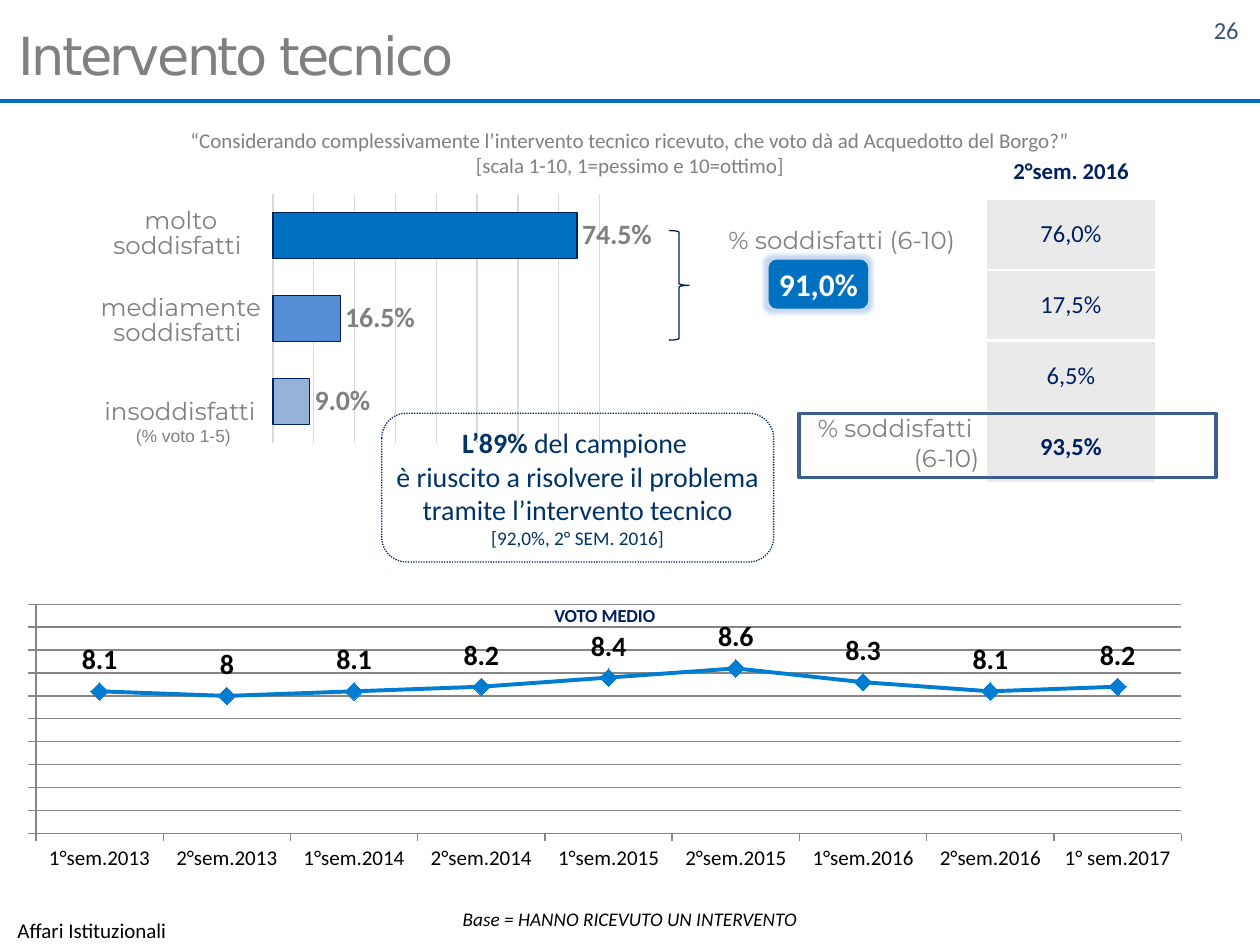
from dataclasses import dataclass

from pptx import Presentation
from pptx.chart.data import CategoryChartData
from pptx.dml.color import RGBColor
from pptx.enum.chart import XL_CHART_TYPE, XL_LABEL_POSITION, XL_MARKER_STYLE, XL_TICK_LABEL_POSITION, XL_TICK_MARK
from pptx.enum.dml import MSO_LINE
from pptx.enum.shapes import MSO_CONNECTOR, MSO_SHAPE
from pptx.enum.text import MSO_ANCHOR, MSO_AUTO_SIZE, PP_ALIGN
from pptx.oxml import parse_xml
from pptx.oxml.ns import nsdecls
from pptx.util import Inches, Pt

LEFT, CENTER, RIGHT = PP_ALIGN.LEFT, PP_ALIGN.CENTER, PP_ALIGN.RIGHT
TOP, MIDDLE = MSO_ANCHOR.TOP, MSO_ANCHOR.MIDDLE
BAR, LINE = XL_CHART_TYPE.BAR_CLUSTERED, XL_CHART_TYPE.LINE_MARKERS
OUTSIDE_END, ABOVE = XL_LABEL_POSITION.OUTSIDE_END, XL_LABEL_POSITION.ABOVE
NO_TICK_LABELS, TICK_OUTSIDE = XL_TICK_LABEL_POSITION.NONE, XL_TICK_MARK.OUTSIDE
DIAMOND, DOTTED, STRAIGHT = XL_MARKER_STYLE.DIAMOND, MSO_LINE.ROUND_DOT, MSO_CONNECTOR.STRAIGHT
ROUNDED, RECTANGLE, BRACE = MSO_SHAPE.ROUNDED_RECTANGLE, MSO_SHAPE.RECTANGLE, MSO_SHAPE.RIGHT_BRACE
PLAIN_INSETS = (0.1, 0.05, 0.1, 0.05)
NO_INSETS = (0, 0, 0, 0)


@dataclass(frozen=True)
class Theme:
    blue: str = "0070C0"
    line_blue: str = "007DD2"
    bar_colours: tuple = ("0070C0", "558ED5", "95B3D7")
    navy: str = "002060"
    callout_blue: str = "003366"
    frame_blue: str = "3A5F8C"
    number_blue: str = "39527B"
    glow: str = "C6D9F1"
    grey: str = "808080"
    grid: str = "D9D9D9"
    axis: str = "868686"
    cell: str = "EAEAEA"
    white: str = "FFFFFF"
    black: str = "000000"
    body: str = "Calibri"
    label: str = "Montserrat"
    note: str = "Arial"
    heading: str = "DejaVu Sans"
    title_size: float = 30
    big: float = 18
    strong: float = 16
    normal: float = 14
    header: float = 13
    small: float = 12
    base: float = 11
    caption: float = 10.5
    tiny: float = 10


THEME = Theme()


def inches(*values):
    return [Inches(value) for value in values]


def style_font(font, size, colour, **values):
    values = {"name": THEME.body, "size": Pt(size), "bold": False, **values}
    for name, value in values.items():
        setattr(font, name, value)
    font.color.rgb = RGBColor.from_string(colour)


def write(frame, lines, size, colour, align=LEFT, anchor=TOP, insets=PLAIN_INSETS, spacing=None, **values):
    frame.word_wrap = True
    frame.auto_size = MSO_AUTO_SIZE.NONE
    frame.vertical_anchor = anchor
    for side, inset in zip(("left", "top", "right", "bottom"), insets):
        setattr(frame, f"margin_{side}", Inches(inset))
    for index, line in enumerate(lines):
        para = frame.add_paragraph() if index else frame.paragraphs[0]
        para.alignment = align
        if spacing:
            para.line_spacing = Pt(spacing)
        for text, changes in ([(line, {})] if isinstance(line, str) else line):
            span = para.add_run()
            span.text = text
            style_font(span.font, **{"size": size, "colour": colour, **values, **changes})


def add_text(page, box, lines, size, colour, **values):
    shape = page.shapes.add_textbox(*inches(*box))
    write(shape.text_frame, lines, size, colour, **values)


def fill_solid(fill, colour):
    fill.solid()
    fill.fore_color.rgb = RGBColor.from_string(colour)


def colour_line(line, colour, width=0.75):
    line.color.rgb = RGBColor.from_string(colour)
    line.width = Pt(width)


def add_box(page, kind, box, fill=None, line=None, width=0.75):
    shape = page.shapes.add_shape(kind, *inches(*box))
    shape.shadow.inherit = False
    if fill:
        fill_solid(shape.fill, fill)
    else:
        shape.fill.background()
    if line:
        colour_line(shape.line, line, width)
    else:
        shape.line.fill.background()
    return shape


def add_plot(page, kind, box, categories, values, layout, label_format, label_position, label_colour):
    data = CategoryChartData()
    data.categories = categories
    data.add_series("Series 1", values)
    chart = page.shapes.add_chart(kind, *inches(*box), data).chart
    chart.has_legend = chart.has_title = False
    style_font(chart.font, THEME.small, THEME.black)
    area = chart.element.xpath("c:chart/c:plotArea")[0]
    for old in area.xpath("c:layout"):
        area.remove(old)
    parts = "".join(f'<c:{name} val="{value}"/>' for name, value in zip("xywh", layout))
    modes = '<c:layoutTarget val="inner"/><c:xMode val="edge"/><c:yMode val="edge"/>'
    area.insert(0, parse_xml(
        f'<c:layout {nsdecls("c")}><c:manualLayout>{modes}{parts}</c:manualLayout></c:layout>'))
    plot = chart.plots[0]
    plot.vary_by_categories = False
    plot.has_data_labels = True
    labels = plot.data_labels
    labels.show_value = True
    labels.number_format = label_format
    labels.number_format_is_linked = False
    labels.position = label_position
    style_font(labels.font, THEME.strong, label_colour, bold=True)
    return chart


def set_scale(axis, low, high, step, grid):
    axis.minimum_scale, axis.maximum_scale, axis.major_unit = low, high, step
    axis.has_major_gridlines = True
    colour_line(axis.major_gridlines.format.line, grid)


def draw_header(page, box):
    left, top, width, height = box
    title = page.shapes.title
    title.left, title.top, title.width, title.height = inches(left, top + 0.12, width - 0.28, 0.63)
    write(title.text_frame, ["Intervento tecnico"], THEME.title_size, THEME.grey,
          anchor=MIDDLE, insets=(0.15, 0.05, 0.1, 0.05), name=THEME.heading)
    title.text_frame.paragraphs[0].runs[0].font._element.set("spc", "-150")
    rule = page.shapes.add_connector(STRAIGHT, *inches(left, top + height, left + width, top + height))
    colour_line(rule.line, THEME.blue, 2)
    rule._element.spPr.append(parse_xml(f'<a:effectLst {nsdecls("a")}/>'))
    add_text(page, (left + width - 2.4, top + 0.07, 2.33, 0.4), ["26"], THEME.normal, THEME.number_blue, align=RIGHT)


def draw_satisfaction(page, box):
    left, top, width, height = box
    grey_label = {"size": THEME.normal, "colour": THEME.grey, "name": THEME.label}
    chart = add_plot(page, BAR, (left + 1.42, top, 3.39, height), ["1", "2", "3"], [0.745, 0.165, 0.09],
                     (0.046, 0.067, 0.765, 0.866), "0.0%", OUTSIDE_END, THEME.grey)
    chart.plots[0].gap_width = 80
    chart.category_axis.reverse_order = True
    chart.category_axis.visible = chart.value_axis.visible = False
    set_scale(chart.value_axis, 0, 0.8, 0.1, THEME.grid)
    for index, colour in enumerate(THEME.bar_colours):
        bar = chart.plots[0].series[0].points[index].format
        fill_solid(bar.fill, colour)
        colour_line(bar.line, THEME.navy)
    for index, text in enumerate(("molto soddisfatti ", "mediamente soddisfatti ")):
        add_text(page, (left - 0.02, top + 0.23 + index * 0.69, 1.73, 0.61), [text],
                 align=CENTER, spacing=14, **grey_label)
    add_text(page, (left, top + 1.7, 1.73, 0.51),
             ["insoddisfatti ", [("(% voto 1-5)", {"size": THEME.tiny, "name": THEME.note})]],
             align=CENTER, **grey_label)
    add_box(page, BRACE, (left + 4.72, top + 0.44, 0.16, 0.87), line=THEME.navy)
    add_text(page, (left + width - 2.4, top + 0.36, 2.4, 0.31), ["% soddisfatti (6-10)"],
             align=RIGHT, anchor=MIDDLE, insets=(0.1, 0, 0.1, 0), **grey_label)
    total = add_box(page, ROUNDED, (left + 5.51, top + 0.67, 0.79, 0.39), fill=THEME.blue)
    total._element.spPr.find("{*}effectLst").append(parse_xml(
        f'<a:glow {nsdecls("a")} rad="63500"><a:srgbClr val="{THEME.glow}"/></a:glow>'))
    write(total.text_frame, ["91,0%"], THEME.big, THEME.white, align=CENTER, anchor=MIDDLE,
          insets=NO_INSETS, bold=True)


def draw_previous(page, box):
    left, top, width, height = box
    values = ["2°sem. 2016", "76,0%", "17,5%", "6,5%", "93,5%"]
    table = page.shapes.add_table(len(values), 1, *inches(left, top, width, height)).table
    table.first_row = table.horz_banding = False
    for index, text in enumerate(values):
        header = index == 0
        table.rows[index].height = Inches(0.43 if header else (height - 0.43) / 4)
        cell = table.cell(index, 0)
        if header:
            cell.fill.background()
        else:
            fill_solid(cell.fill, THEME.cell)
        para = cell.text_frame.paragraphs[0]
        para.alignment = CENTER
        span = para.add_run()
        span.text = text
        style_font(span.font, THEME.header if header else THEME.normal, THEME.navy,
                   bold=index in (0, len(values) - 1))
        cell.vertical_anchor = MIDDLE
        cell.margin_left = cell.margin_right = cell.margin_top = cell.margin_bottom = Inches(0.04 if header else 0.01)
        edges = {"lnL": 1, "lnR": 1, "lnT": 2.25 if index == 3 else 1, "lnB": 2.25 if index == 2 else 1}
        properties = cell._tc.get_or_add_tcPr()
        for place, (edge, points) in enumerate(edges.items()):
            properties.insert(place, parse_xml(
                f'<a:{edge} {nsdecls("a")} w="{Pt(points)}"><a:solidFill>'
                f'<a:srgbClr val="{THEME.white}"/></a:solidFill></a:{edge}>'))
    add_box(page, RECTANGLE, (left - 1.49, top + 2.13, 3.31, 0.51), line=THEME.frame_blue, width=2)
    add_text(page, (left - 2.36, top + 2.21, 2.4, 0.31), ["% soddisfatti ", "(6-10)"], THEME.normal, THEME.grey,
             align=RIGHT, anchor=MIDDLE, insets=(0.1, 0, 0.1, 0), name=THEME.label)


def draw_callout(page, box):
    callout = add_box(page, ROUNDED, box, line=THEME.navy)
    callout.line.dash_style = DOTTED
    lines = [[("L’89%", {"bold": True}), (" del campione ", {})], "è riuscito a risolvere il problema ",
             "tramite l’intervento tecnico", [("[92,0%, 2° SEM. 2016]", {"size": THEME.base})]]
    write(callout.text_frame, lines, THEME.strong, THEME.callout_blue, align=CENTER, anchor=MIDDLE, insets=[0.04] * 4)


def draw_trend(page, box):
    left, top, width, height = box
    periods = [f"{half}°sem.{year}" for year in range(2013, 2017) for half in (1, 2)] + ["1° sem.2017"]
    chart = add_plot(page, LINE, box, periods, [8.1, 8, 8.1, 8.2, 8.4, 8.6, 8.3, 8.1, 8.2],
                     (0.042, 0, 0.942, 0.661), "General", ABOVE, THEME.black)
    set_scale(chart.value_axis, 5, 10, 0.5, THEME.axis)
    chart.value_axis.tick_label_position = NO_TICK_LABELS
    for axis in (chart.category_axis, chart.value_axis):
        axis.major_tick_mark = TICK_OUTSIDE
        colour_line(axis.format.line, THEME.axis)
    series = chart.plots[0].series[0]
    series.smooth = False
    colour_line(series.format.line, THEME.line_blue, 2.25)
    series.marker.style, series.marker.size = DIAMOND, 10
    fill_solid(series.marker.format.fill, THEME.line_blue)
    colour_line(series.marker.format.line, THEME.line_blue)
    add_text(page, (left + 3.82, top - 0.02, 2.2, 0.26), ["VOTO MEDIO"], THEME.caption, THEME.navy,
             align=CENTER, spacing=11, bold=True)


def draw_notes(page, box):
    left, top, width, height = box
    add_text(page, (left + 0.04, top + 0.08, 3.15, 0.3), ["Affari Istituzionali"], THEME.small, THEME.black,
             anchor=MIDDLE)
    base = add_box(page, ROUNDED, (left + 3.62, top, 2.76, 0.29), fill=THEME.white)
    write(base.text_frame, ["Base = HANNO RICEVUTO UN INTERVENTO"], THEME.base, THEME.black,
          align=CENTER, anchor=MIDDLE, insets=NO_INSETS, italic=True)


def main():
    deck = Presentation()
    deck.slide_width, deck.slide_height = inches(10, 7.5)
    page = deck.slides.add_slide(deck.slide_layouts[5])
    draw_header(page, (0, 0, 10, 0.8))
    draw_satisfaction(page, (0.59, 1.39, 7.09, 2.28))
    draw_previous(page, (7.83, 1.15, 1.34, 2.68))
    draw_trend(page, (-0.12, 4.79, 9.65, 2.76))
    add_text(page, (1.4, 0.96, 7.2, 0.5),
             ["“Considerando complessivamente l’intervento tecnico ricevuto, che voto dà ad Acquedotto del Borgo?” ",
              "[scala 1-10, 1=pessimo e 10=ottimo]"], THEME.small, THEME.grey, align=CENTER)
    draw_notes(page, (0, 7.15, 10, 0.35))
    draw_callout(page, (3.03, 3.28, 3.11, 1.18))
    deck.save("out.pptx")


if __name__ == "__main__":
    main()
